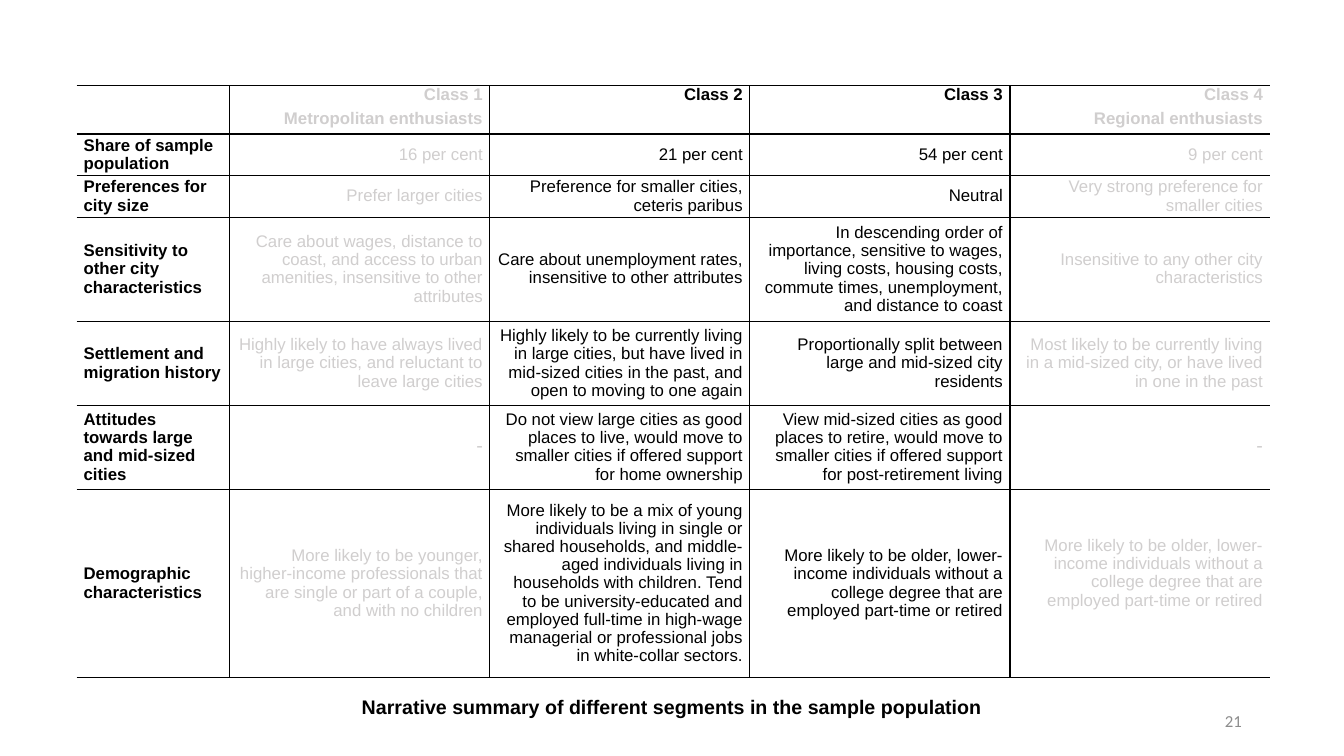
from dataclasses import dataclass

from lxml import etree
from pptx import Presentation
from pptx.dml.color import RGBColor
from pptx.enum.text import MSO_ANCHOR, PP_ALIGN
from pptx.oxml.ns import qn
from pptx.util import Inches, Pt

LEFT, CENTER, RIGHT = PP_ALIGN.LEFT, PP_ALIGN.CENTER, PP_ALIGN.RIGHT
TOP, MIDDLE = MSO_ANCHOR.TOP, MSO_ANCHOR.MIDDLE


@dataclass(frozen=True)
class Theme:
    """Colours, fonts and type sizes in points."""

    ink: str = "000000"
    muted: str = "D0CECE"
    page_number: str = "8C8C8C"
    font: str = "Arial"
    number_font: str = "Calibri"
    body: int = 12
    large: int = 14
    line_spacing: int = 13
    paragraph_gap: int = 2
    border: int = 1


COLUMN_WIDTHS = [11.4] + [19.35] * 4
ROW_HEIGHTS = [6.4, 5.5, 5.5, 13.8, 11.1, 11.1, 24.9]
MUTED_COLUMNS = (1, 4)
SEGMENTS = [
    ["", "Class 1\nMetropolitan enthusiasts", "Class 2", "Class 3", "Class 4\nRegional enthusiasts"],
    ["Share of sample population", "16 per cent", "21 per cent", "54 per cent", "9 per cent"],
    [
        "Preferences for city size",
        "Prefer larger cities",
        "Preference for smaller cities, ceteris paribus",
        "Neutral",
        "Very strong preference for smaller cities",
    ],
    [
        "Sensitivity to other city characteristics",
        "Care about wages, distance to coast, and access to urban amenities, "
        "insensitive to other attributes",
        "Care about unemployment rates, insensitive to other attributes",
        "In descending order of importance, sensitive to wages, living costs, housing costs, "
        "commute times, unemployment, and distance to coast",
        "Insensitive to any other city characteristics",
    ],
    [
        "Settlement and migration history",
        "Highly likely to have always lived in large cities, and reluctant to leave large cities",
        "Highly likely to be currently living in large cities, but have lived in mid-sized cities "
        "in the past, and open to moving to one again",
        "Proportionally split between large and mid-sized city residents",
        "Most likely to be currently living in a mid-sized city, or have lived in one in the past",
    ],
    [
        "Attitudes towards large and mid-sized cities",
        "-",
        "Do not view large cities as good places to live, would move to smaller cities "
        "if offered support for home ownership",
        "View mid-sized cities as good places to retire, would move to smaller cities "
        "if offered support for post-retirement living",
        "-",
    ],
    [
        "Demographic characteristics",
        "More likely to be younger, higher-income professionals that are single "
        "or part of a couple, and with no children",
        "More likely to be a mix of young individuals living in single or shared households, "
        "and middle-aged individuals living in households with children. Tend to be "
        "university-educated and employed full-time in high-wage managerial or professional "
        "jobs in white-collar sectors.",
        "More likely to be older, lower-income individuals without a college degree "
        "that are employed part-time or retired",
        "More likely to be older, lower-income individuals without a college degree "
        "that are employed part-time or retired",
    ],
]


def write_text(frame, text, *, font, size, color, bold=False, align=LEFT, spacing=None, gap=0):
    """Fill a text frame with one formatted paragraph per line of text."""
    frame.word_wrap = True
    for index, line in enumerate(text.split("\n")):
        paragraph = frame.add_paragraph() if index else frame.paragraphs[0]
        paragraph.alignment = align
        paragraph.space_before = paragraph.space_after = Pt(gap)
        if spacing:
            paragraph.line_spacing = Pt(spacing)
        paragraph.font.size = Pt(size)
        if line:
            run = paragraph.add_run()
            run.text = line
            run.font.name = font
            run.font.size = Pt(size)
            run.font.bold = bold
            run.font.color.rgb = RGBColor.from_string(color)


class SlideBuilder:
    """Places elements on one slide, with lengths in percent of its size."""

    def __init__(self, presentation, theme):
        """Add a blank slide to the presentation."""
        self.theme = theme
        self.width = presentation.slide_width
        self.height = presentation.slide_height
        self.slide = presentation.slides.add_slide(presentation.slide_layouts[6])

    def across(self, share):
        """Turn a share of the slide width into a length."""
        return round(self.width * share / 100)

    def down(self, share):
        """Turn a share of the slide height into a length."""
        return round(self.height * share / 100)

    def box(self, left, top, width, height):
        """Turn four shares into a position and a size."""
        return self.across(left), self.down(top), self.across(width), self.down(height)

    def text(self, text, area, *, anchor=TOP, **style):
        """Add a text box."""
        frame = self.slide.shapes.add_textbox(*self.box(*area)).text_frame
        frame.vertical_anchor = anchor
        write_text(frame, text, **style)

    def border(self, cell, side, visible):
        """Draw or hide one border of a cell."""
        width = str(Pt(self.theme.border))
        line = etree.SubElement(cell._tc.get_or_add_tcPr(), qn(f"a:ln{side}"), w=width)
        if visible:
            fill = etree.SubElement(line, qn("a:solidFill"))
            etree.SubElement(fill, qn("a:srgbClr"), val=self.theme.ink)
        else:
            etree.SubElement(line, qn("a:noFill"))

    def segment_cell(self, cell, text, row, column):
        """Format one cell by its place in the table."""
        theme = self.theme
        last_column = len(COLUMN_WIDTHS) - 1
        cell.margin_left = cell.margin_right = Inches(0.07)
        cell.margin_top = cell.margin_bottom = 0
        cell.vertical_anchor = MIDDLE if row else TOP
        write_text(
            cell.text_frame,
            text,
            font=theme.font,
            size=theme.large if text == "-" else theme.body,
            color=theme.muted if column in MUTED_COLUMNS else theme.ink,
            bold=row == 0 or column == 0,
            align=RIGHT if column else LEFT,
            spacing=theme.line_spacing,
            gap=theme.paragraph_gap,
        )
        for side, visible in (("L", column > 0), ("R", column < last_column), ("T", True), ("B", True)):
            self.border(cell, side, visible)
        cell.fill.background()

    def table(self, left, top, contents):
        """Add the ruled table of segments."""
        area = self.box(left, top, sum(COLUMN_WIDTHS), sum(ROW_HEIGHTS))
        table = self.slide.shapes.add_table(len(ROW_HEIGHTS), len(COLUMN_WIDTHS), *area).table
        table.first_row = table.horz_banding = False
        for column, share in zip(table.columns, COLUMN_WIDTHS):
            column.width = self.across(share)
        for row, share in zip(table.rows, ROW_HEIGHTS):
            row.height = self.down(share)
        for row, texts in enumerate(contents):
            for column, text in enumerate(texts):
                self.segment_cell(table.cell(row, column), text, row, column)
        return table


def main():
    """Build and save the presentation."""
    presentation = Presentation()
    presentation.slide_width, presentation.slide_height = Inches(13.33), Inches(7.5)
    theme = Theme()
    builder = SlideBuilder(presentation, theme)
    table = builder.table(5.7, 11.33, SEGMENTS)
    table.cell(6, 4).margin_bottom = Inches(0.2)
    builder.text(
        "Narrative summary of different segments in the sample population",
        (25, 91.2, 50, 4.53), font=theme.font, size=theme.large, color=theme.ink, bold=True, align=CENTER,
    )
    builder.text(
        "21", (70.65, 92.67, 22.5, 5.33), anchor=MIDDLE,
        font=theme.number_font, size=theme.body, color=theme.page_number, align=RIGHT,
    )
    presentation.save("out.pptx")


if __name__ == "__main__":
    main()
